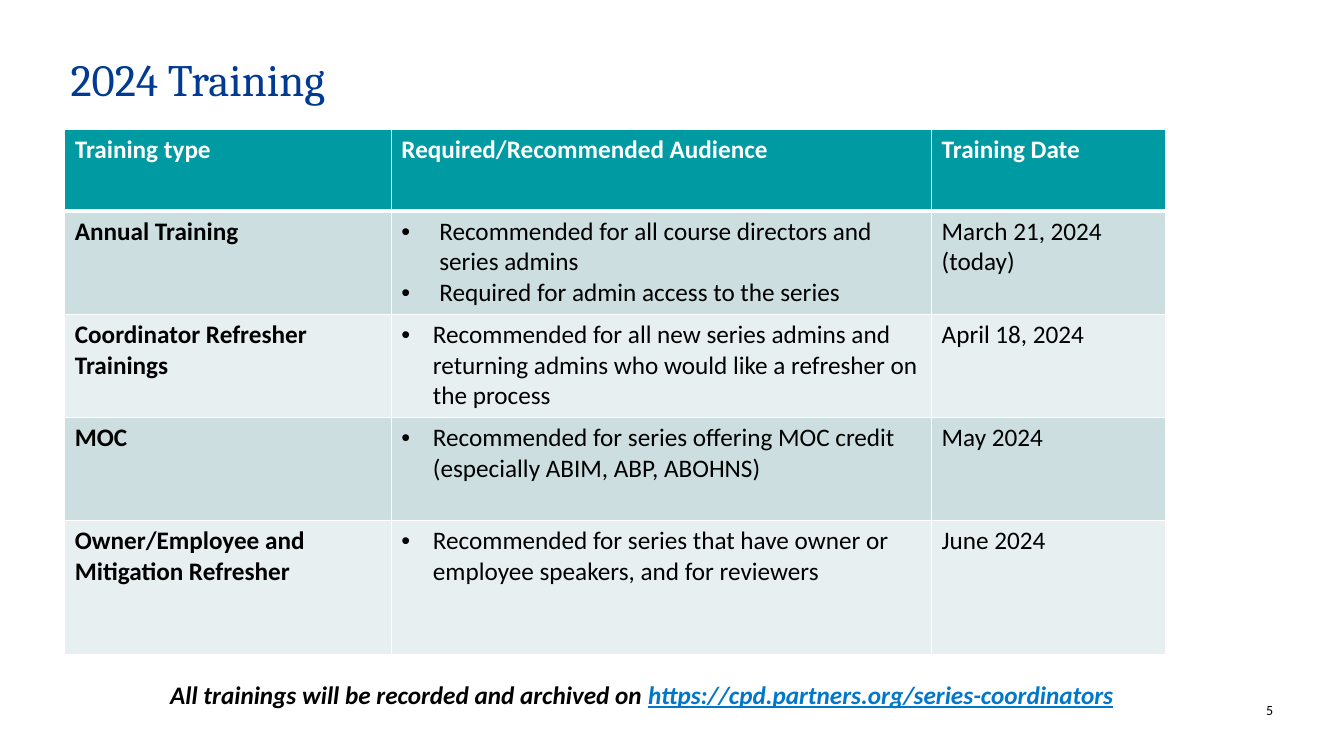
import pptx
import pptx.dml.color
import pptx.enum.text
import pptx.oxml
import pptx.oxml.ns
import pptx.util
from lxml import etree

Pt = pptx.util.Pt
RGBColor = pptx.dml.color.RGBColor
PP_ALIGN = pptx.enum.text.PP_ALIGN
qn = pptx.oxml.ns.qn

NAVY = RGBColor(0x00, 0x3A, 0x93)
TEAL = RGBColor(0x00, 0x9A, 0xA3)
BAND_DARK = RGBColor(0xCC, 0xDE, 0xE0)
BAND_LIGHT = RGBColor(0xE7, 0xEF, 0xF0)
LINK_BLUE = RGBColor(0x00, 0x77, 0xCA)
WHITE = RGBColor(0xFF, 0xFF, 0xFF)
BLACK = RGBColor(0x00, 0x00, 0x00)

HEADINGS = ["Training type", "Required/Recommended Audience", "Training Date"]
TRAININGS = [
    ("Annual Training",
     ["Recommended for all course directors and series admins",
      "Required for admin access to the series"],
     "March 21, 2024 (today)"),
    ("Coordinator Refresher Trainings",
     ["Recommended for all new series admins and returning admins "
      "who would like a refresher on the process"],
     "April 18, 2024"),
    ("MOC",
     ["Recommended for series offering MOC credit (especially ABIM, ABP, ABOHNS)"],
     "May 2024"),
    ("Owner/Employee and Mitigation Refresher",
     ["Recommended for series that have owner or employee speakers, and for reviewers"],
     "June 2024"),
]
COLUMN_WIDTHS = [233.3, 385.9, 167]
ROW_HEIGHTS = [58.3, 73.8, 73.8, 73.8, 95.8]


def set_font(font, name, size, color, bold=False, italic=False):
    font.name = name
    font.size = Pt(size)
    font.color.rgb = color
    font.bold = bold
    font.italic = italic


def add_bullet(paragraph, indent):
    properties = paragraph._p.get_or_add_pPr()
    properties.set("marL", str(Pt(indent)))
    properties.set("indent", str(-Pt(indent)))
    etree.SubElement(properties, qn("a:buFont")).set("typeface", "Arial")
    etree.SubElement(properties, qn("a:buChar")).set("char", "•")


def add_borders(cell, top, bottom):
    properties = cell._tc.get_or_add_tcPr()
    for side, width in (("L", 1), ("R", 1), ("T", top), ("B", bottom)):
        line = etree.SubElement(properties, qn("a:ln" + side), w=str(Pt(width)))
        fill = etree.SubElement(line, qn("a:solidFill"))
        etree.SubElement(fill, qn("a:srgbClr")).set("val", str(WHITE))


def fill_cell(cell, lines, fill, color, bold=False, bullet_indent=0, top=1, bottom=1):
    add_borders(cell, top, bottom)
    cell.fill.solid()
    cell.fill.fore_color.rgb = fill
    cell.text = "\n".join(lines)
    for paragraph in cell.text_frame.paragraphs:
        if bullet_indent:
            add_bullet(paragraph, bullet_indent)
        set_font(paragraph.font, "Calibri", 18, color, bold)


def add_title(slide, text):
    title = slide.shapes.title
    title.left, title.top, title.width, title.height = Pt(50.4), Pt(41), Pt(858), Pt(75.6)
    frame = title.text_frame
    frame.margin_left = frame.margin_top = frame.margin_right = frame.margin_bottom = 0
    frame.vertical_anchor = pptx.enum.text.MSO_ANCHOR.TOP
    frame.auto_size = pptx.enum.text.MSO_AUTO_SIZE.NONE
    frame.text = text
    heading = frame.paragraphs[0]
    heading.alignment = PP_ALIGN.LEFT
    heading.line_spacing = 0.9
    set_font(heading.font, "Cambria", 32, NAVY)


def add_schedule(slide):
    schedule = slide.shapes.add_table(
        len(ROW_HEIGHTS), len(COLUMN_WIDTHS), Pt(46.3), Pt(92.4),
        Pt(sum(COLUMN_WIDTHS)), Pt(sum(ROW_HEIGHTS))).table
    for column, width in zip(schedule.columns, COLUMN_WIDTHS):
        column.width = Pt(width)
    for row, height in zip(schedule.rows, ROW_HEIGHTS):
        row.height = Pt(height)

    for column, heading in enumerate(HEADINGS):
        fill_cell(schedule.cell(0, column), [heading], TEAL, WHITE, bold=True, bottom=3)
    for row, (training, audience, date) in enumerate(TRAININGS, start=1):
        band = BAND_DARK if row % 2 else BAND_LIGHT
        top = 3 if row == 1 else 1
        indent = 27 if row == 1 else 22.5
        fill_cell(schedule.cell(row, 0), [training], band, BLACK, bold=True, top=top)
        fill_cell(schedule.cell(row, 1), audience, band, BLACK, bullet_indent=indent, top=top)
        fill_cell(schedule.cell(row, 2), [date], band, BLACK, top=top)


def add_text_box(slide, left, top, width, height):
    frame = slide.shapes.add_textbox(Pt(left), Pt(top), Pt(width), Pt(height)).text_frame
    frame.word_wrap = True
    return frame


def add_archive_note(slide):
    note = add_text_box(slide, 114.5, 481.7, 705.6, 29).paragraphs[0]
    set_font(note.font, "Calibri", 18, BLACK, bold=True, italic=True)
    note.add_run().text = "All trainings will be recorded and archived on "
    address = note.add_run()
    address.text = "https://cpd.partners.org/series-coordinators"
    address.font.color.rgb = LINK_BLUE
    address.font.underline = True


def add_page_number(slide, number):
    frame = add_text_box(slide, 882, 501, 27.4, 12.2)
    frame.margin_left = frame.margin_top = frame.margin_right = frame.margin_bottom = 0
    frame.text = number
    page = frame.paragraphs[0]
    page.alignment = PP_ALIGN.RIGHT
    set_font(page.font, "Calibri", 10, BLACK)


def main():
    presentation = pptx.Presentation()
    presentation.slide_width = Pt(960)
    presentation.slide_height = Pt(540)
    slide = presentation.slides.add_slide(presentation.slide_layouts[5])

    # Heading
    add_title(slide, "2024 Training")
    # Training schedule
    add_schedule(slide)
    # Footer
    add_archive_note(slide)
    add_page_number(slide, "5")

    presentation.save("out.pptx")


if __name__ == "__main__":
    main()
